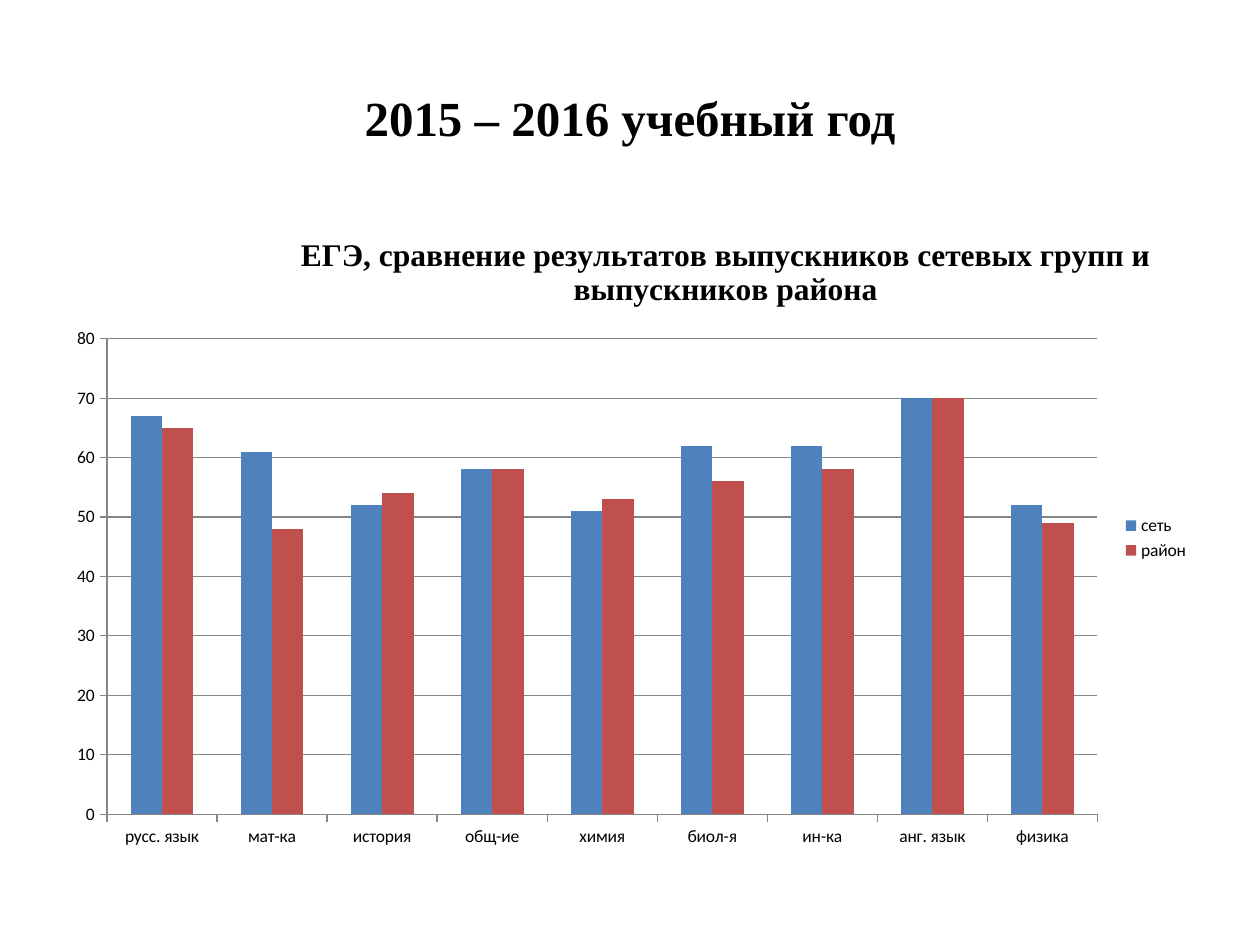
from lxml.etree import SubElement
from pptx import Presentation
from pptx.chart.data import CategoryChartData
from pptx.dml.color import RGBColor
from pptx.enum.chart import XL_CHART_TYPE, XL_LEGEND_POSITION, XL_TICK_MARK
from pptx.enum.text import MSO_ANCHOR, PP_ALIGN
from pptx.oxml.ns import qn
from pptx.util import Inches, Pt

# Content
HEADING = "2015 – 2016 учебный год"
CHART_TITLE = "ЕГЭ, сравнение результатов выпускников сетевых групп и выпускников района"
SUBJECTS = ["русс. язык", "мат-ка", "история", "общ-ие", "химия",
            "биол-я", "ин-ка", "анг. язык", "физика"]
SCORES = [
    ("сеть", "4F81BD", [67, 61, 52, 58, 51, 62, 62, 70, 52]),
    ("район", "C0504D", [65, 48, 54, 58, 53, 56, 58, 70, 49]),
]
BLACK, GRAY = "000000", "868686"


def set_font(font, name, size, bold=False):
    font.name, font.size, font.bold = name, Pt(size), bold
    font.color.rgb = RGBColor.from_string(BLACK)


def set_line(line):
    line.color.rgb = RGBColor.from_string(GRAY)
    line.width = Pt(0.75)


def place(part, **settings):
    """Give a chart part a manual layout, as fractions of the chart."""
    layout = part.find(qn("c:layout"))
    if layout is None:
        layout = SubElement(part, qn("c:layout"))
    manual = SubElement(layout, qn("c:manualLayout"))
    for tag, value in settings.items():
        SubElement(manual, qn(f"c:{tag}")).set("val", str(value))
    return layout


prs = Presentation()
prs.slide_width, prs.slide_height = Inches(10), Inches(7.5)
slide = prs.slides.add_slide(prs.slide_layouts[5])

# Heading
heading = slide.shapes.title
heading.left, heading.top = Inches(0.5), Inches(0.3)
heading.width, heading.height = Inches(9), Inches(1.25)
heading.text_frame.text = HEADING
heading.text_frame.vertical_anchor = MSO_ANCHOR.MIDDLE
heading_line = heading.text_frame.paragraphs[0]
heading_line.alignment = PP_ALIGN.CENTER
set_font(heading_line.font, "Times New Roman", 28, True)

# Chart
results = CategoryChartData()
results.categories = SUBJECTS
for group, _, scores in SCORES:
    results.add_series(group, scores)
chart = slide.shapes.add_chart(
    XL_CHART_TYPE.COLUMN_CLUSTERED, Inches(0.43), Inches(1.72),
    Inches(9.11), Inches(5.1), results).chart
set_font(chart.font, "Calibri", 10)

# Columns
columns = chart.plots[0]
columns.gap_width, columns.overlap = 150, 0
columns.vary_by_categories = False
for series, (_, color, _) in zip(columns.series, SCORES):
    series.format.fill.solid()
    series.format.fill.fore_color.rgb = RGBColor.from_string(color)

# Axes
for axis in (chart.category_axis, chart.value_axis):
    axis.major_tick_mark = XL_TICK_MARK.OUTSIDE
    axis.minor_tick_mark = XL_TICK_MARK.NONE
    set_line(axis.format.line)
scale = chart.value_axis
scale.minimum_scale, scale.maximum_scale, scale.major_unit = 0, 80, 10
scale.has_major_gridlines = True
set_line(scale.major_gridlines.format.line)

# Legend
chart.has_legend = True
chart.legend.position = XL_LEGEND_POSITION.RIGHT
chart.legend.include_in_layout = False

# Chart title
chart.has_title = True
title_frame = chart.chart_title.text_frame
title_frame.text = CHART_TITLE
set_font(title_frame.paragraphs[0].font, "Times New Roman", 18, True)
chart.chart_title.include_in_layout = False

# Positions inside the chart
title_part = chart.chart_title.format and chart._chartSpace.chart.find(qn("c:title"))
title_layout = place(title_part, xMode="edge", yMode="edge", x=0.21, y=0.02)
title_part.find(qn("c:tx")).addnext(title_layout)
plot_part = chart._chartSpace.chart.plotArea
plot_layout = place(plot_part, layoutTarget="inner", xMode="edge", yMode="edge",
                    x=0.046, y=0.19, w=0.863, h=0.74)
plot_part.insert(0, plot_layout)

prs.save("out.pptx")
